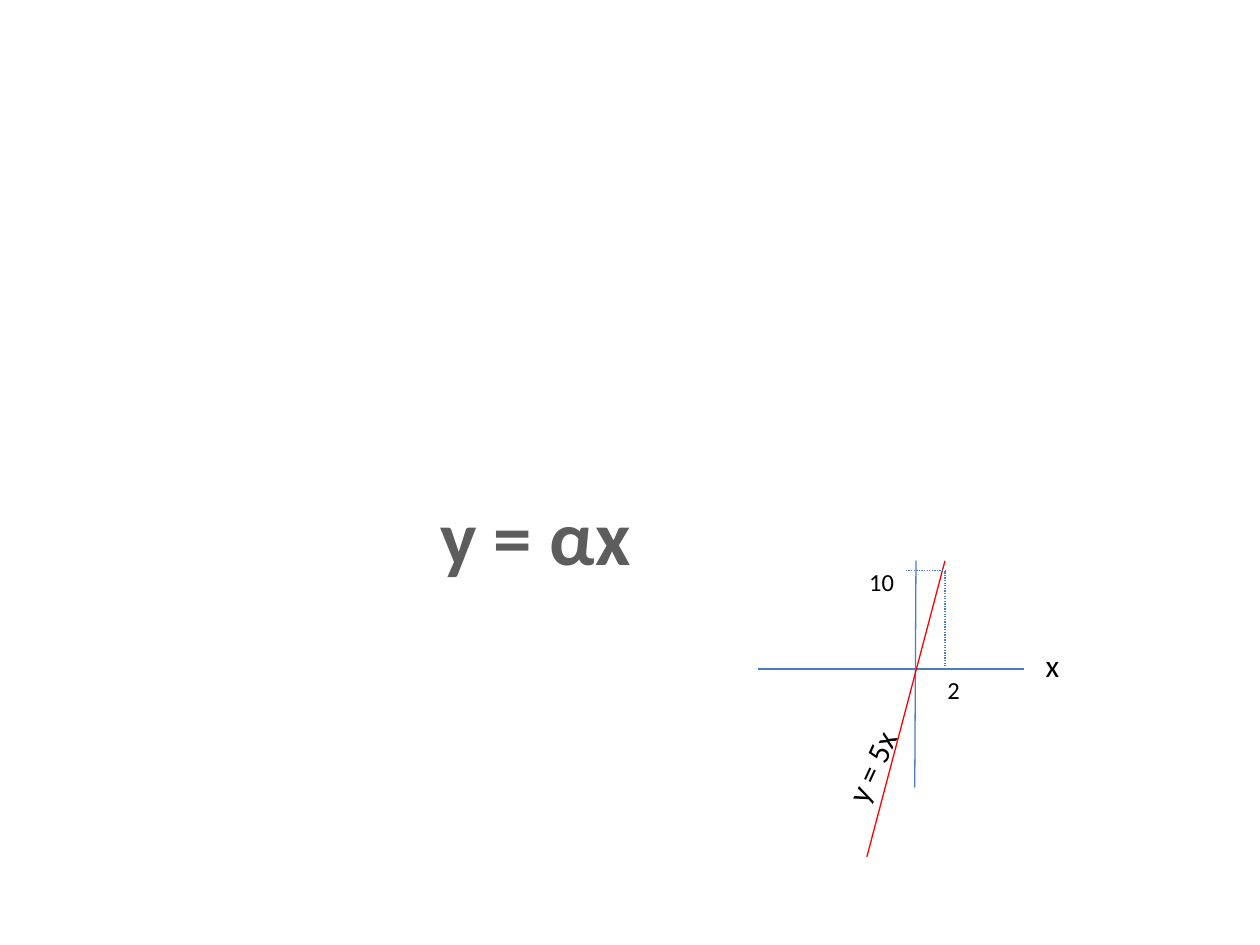
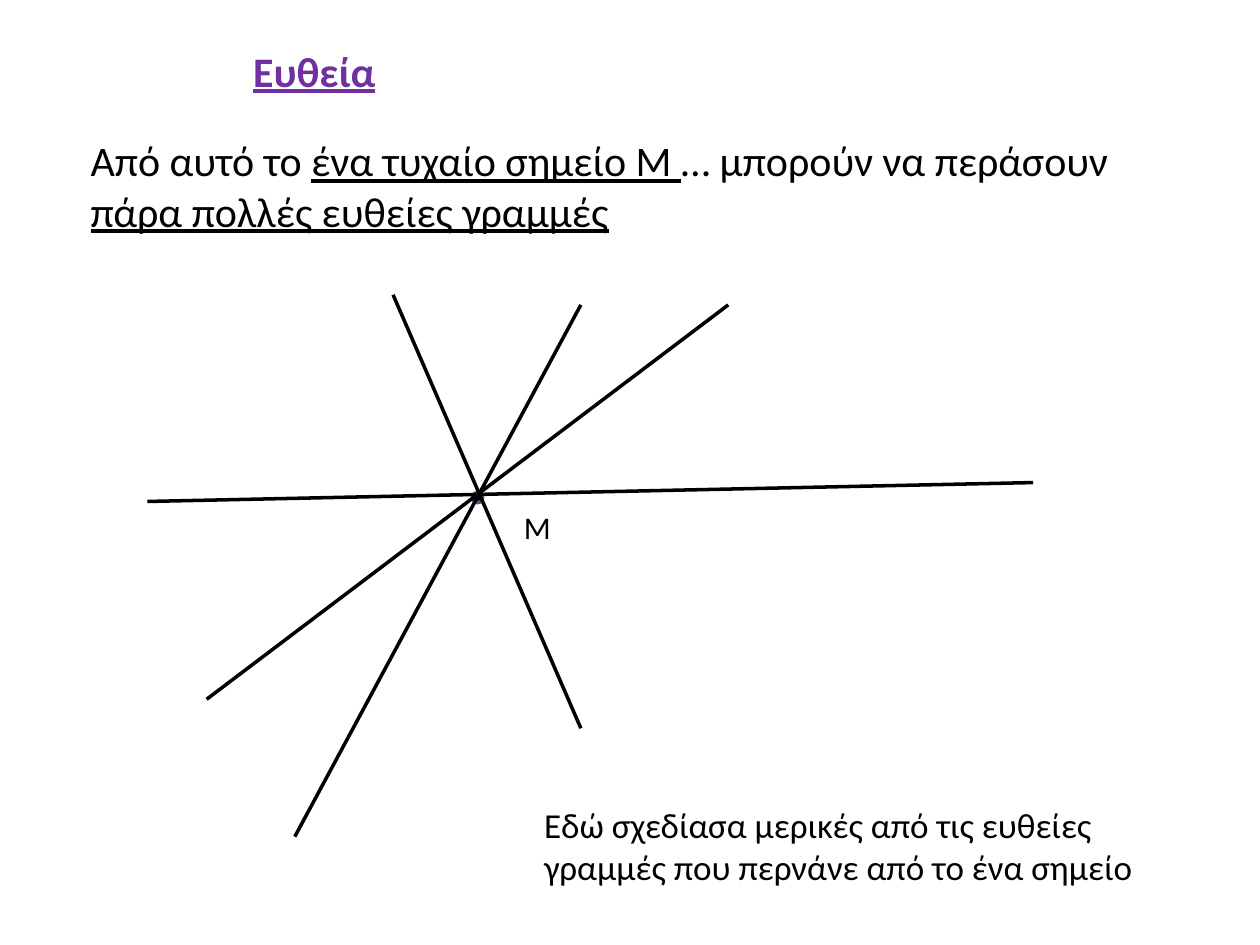
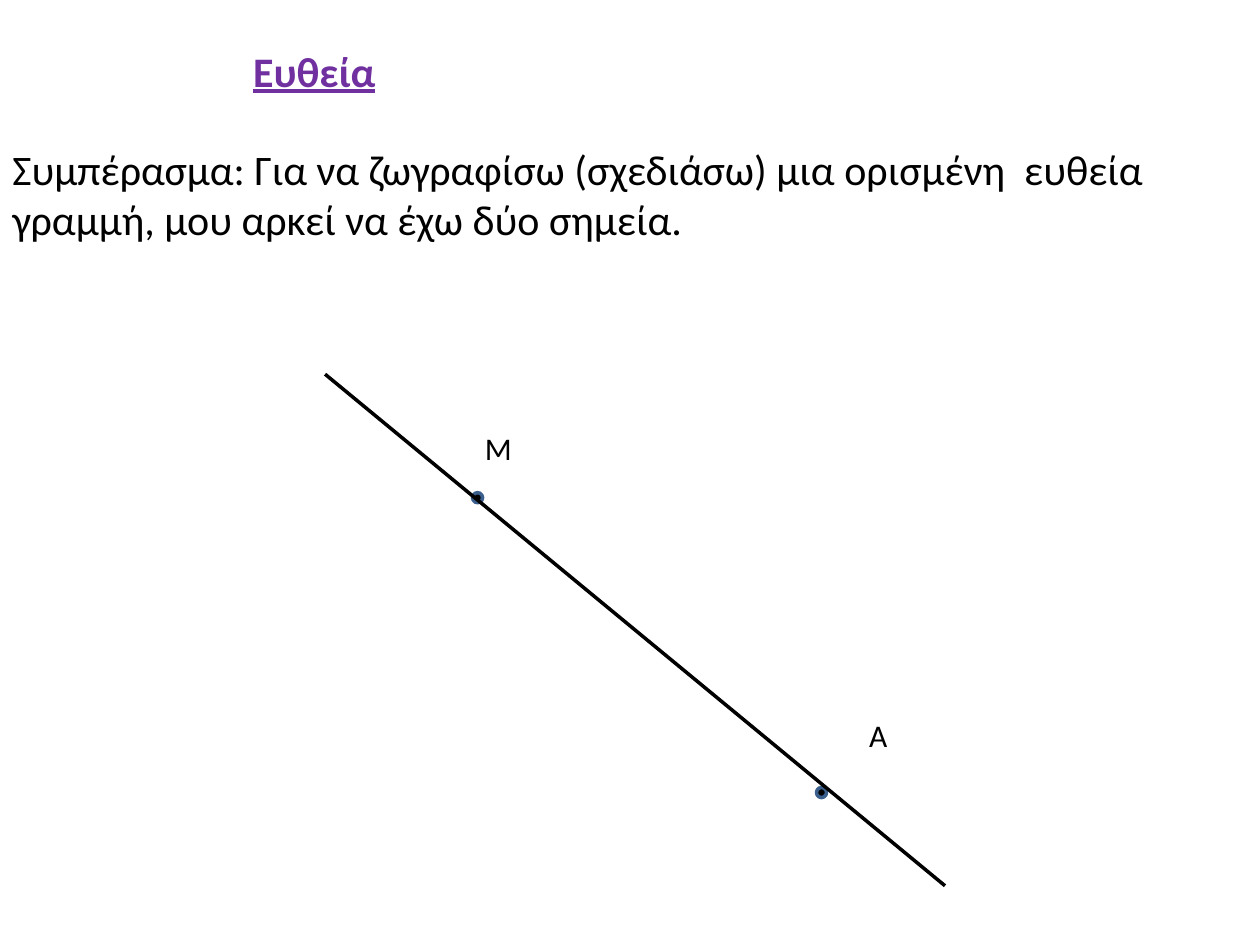
from typing import NamedTuple

from lxml import etree
from pptx import Presentation
from pptx import util as u
from pptx.dml.color import RGBColor
from pptx.enum import dml, shapes, text
from pptx.oxml import ns

PX = 9144  # 100 px to the inch
FONT = "Calibri"
BLACK = RGBColor(0x00, 0x00, 0x00)
GREY = RGBColor(0x5D, 0x5D, 0x5D)
PURPLE = RGBColor(0x70, 0x30, 0xA0)
RED = RGBColor(0xFF, 0x00, 0x00)
BLUE = RGBColor(0x4B, 0x7E, 0xBC)
DARK_BLUE = RGBColor(0x3A, 0x5F, 0x8C)
DOT_SIZE = 8


class Box(NamedTuple):
    x: int
    y: int
    w: int
    h: int


class Line(NamedTuple):
    x1: int
    y1: int
    x2: int
    y2: int
    color: RGBColor = BLACK
    width: float = 2
    dotted: bool = False


class Label(NamedTuple):
    text: str
    box: Box
    size: int = 18
    rotation: float = 0


def px(*lengths: int) -> list[u.Emu]:
    return [u.Emu(n * PX) for n in lengths]


def add_text(s, box: Box, *parts: str, size: int = 24, color: RGBColor = BLACK,
             bold: bool = False, underlined: tuple[int, ...] = (), indent: int = 0,
             align=None, anchor=text.MSO_ANCHOR.TOP, rotation: float = 0) -> None:
    """Write one paragraph; underlined holds the indexes of the underlined parts."""
    sp = s.shapes.add_textbox(*px(*box))
    sp.rotation = rotation
    tf = sp.text_frame
    tf.word_wrap = True
    tf.vertical_anchor = anchor
    p = tf.paragraphs[0]
    p.alignment = align
    if indent:
        p.level = 1
        p._p.get_or_add_pPr().set("marL", str(indent * PX))
    for i, part in enumerate(parts):
        r = p.add_run()
        r.text = part
        r.font.name = FONT
        r.font.size = u.Pt(size)
        r.font.bold = bold
        r.font.underline = i in underlined
        r.font.color.rgb = color


def add_line(s, line: Line) -> None:
    cxn = s.shapes.add_connector(
        shapes.MSO_CONNECTOR.STRAIGHT, *px(line.x1, line.y1, line.x2, line.y2))
    cxn.line.color.rgb = line.color
    cxn.line.width = u.Pt(line.width)
    if line.dotted:
        cxn.line.dash_style = dml.MSO_LINE.ROUND_DOT
    etree.SubElement(cxn._element.spPr, ns.qn("a:effectLst"))


def add_point(s, x: int, y: int) -> None:
    sp = s.shapes.add_shape(shapes.MSO_SHAPE.OVAL, *px(x, y, DOT_SIZE, DOT_SIZE))
    sp.shadow.inherit = False
    sp.fill.solid()
    sp.fill.fore_color.rgb = BLACK
    sp.line.color.rgb = DARK_BLUE
    sp.line.width = u.Pt(2)


def add_labels(s, *labels: Label) -> None:
    for label in labels:
        add_text(s, label.box, label.text, size=label.size, rotation=label.rotation)


def new_slide(prs):
    return prs.slides.add_slide(prs.slide_layouts[6])


def new_line_slide(prs):
    """Start a slide under the heading on straight lines."""
    s = new_slide(prs)
    add_text(s, Box(141, 31, 555, 50), "Ευθεία", color=PURPLE, bold=True,
             underlined=(0,), indent=50)
    return s


def build_function_slide(prs) -> None:
    s = new_slide(prs)
    add_text(s, Box(0, 344, 850, 161), "y = αx", size=44, color=GREY, bold=True,
             align=text.PP_ALIGN.CENTER, anchor=text.MSO_ANCHOR.MIDDLE)
    for line in (
        Line(727, 445, 726, 625, BLUE, 0.75),
        Line(602, 531, 813, 531, BLUE, 0.75),
        Line(688, 680, 750, 445, RED, 0.75),
        Line(719, 453, 750, 453, BLUE, 0.75, True),
        Line(750, 531, 750, 453, BLUE, 0.75, True),
    ):
        add_line(s, line)
    add_labels(
        s,
        Label("10", Box(680, 445, 47, 34), 14),
        Label("2", Box(742, 531, 47, 34), 14),
        Label("y = 5x", Box(634, 560, 141, 40), rotation=294.8),
        Label("x", Box(820, 508, 39, 40)),
    )


def build_one_point_slide(prs) -> None:
    s = new_line_slide(prs)
    add_text(s, Box(62, 102, 859, 91), "Από αυτό το ", "ένα τυχαίο σημείο Μ ",
             "… μπορούν να περάσουν ", "πάρα πολλές ευθείες γραμμές",
             underlined=(1, 3))
    add_point(s, 375, 391)
    for line in (
        Line(164, 555, 578, 242),
        Line(234, 664, 461, 242),
        Line(117, 398, 820, 383),
        Line(461, 578, 312, 234),
    ):
        add_line(s, line)
    add_text(s, Box(422, 633, 555, 77),
             "Εδώ σχεδίασα μερικές από τις ευθείες γραμμές που περνάνε από "
             "το ένα σημείο", size=20)
    add_labels(s, Label("Μ", Box(406, 398, 47, 40)))


def build_two_points_slide(prs) -> None:
    s = new_line_slide(prs)
    add_text(s, Box(0, 109, 969, 91),
             "Συμπέρασμα: Για να ζωγραφίσω (σχεδιάσω) μια ορισμένη  ευθεία "
             "γραμμή, μου αρκεί να έχω δύο σημεία.")
    add_point(s, 375, 391)
    add_point(s, 648, 625)
    add_labels(s, Label("Μ", Box(375, 336, 47, 40)),
               Label("Α", Box(680, 563, 47, 40)))
    add_line(s, Line(258, 297, 750, 703))


def main() -> None:
    prs = Presentation()
    prs.slide_width, prs.slide_height = px(1000, 750)
    build_function_slide(prs)
    build_one_point_slide(prs)
    build_two_points_slide(prs)
    prs.save("out.pptx")


if __name__ == "__main__":
    main()
